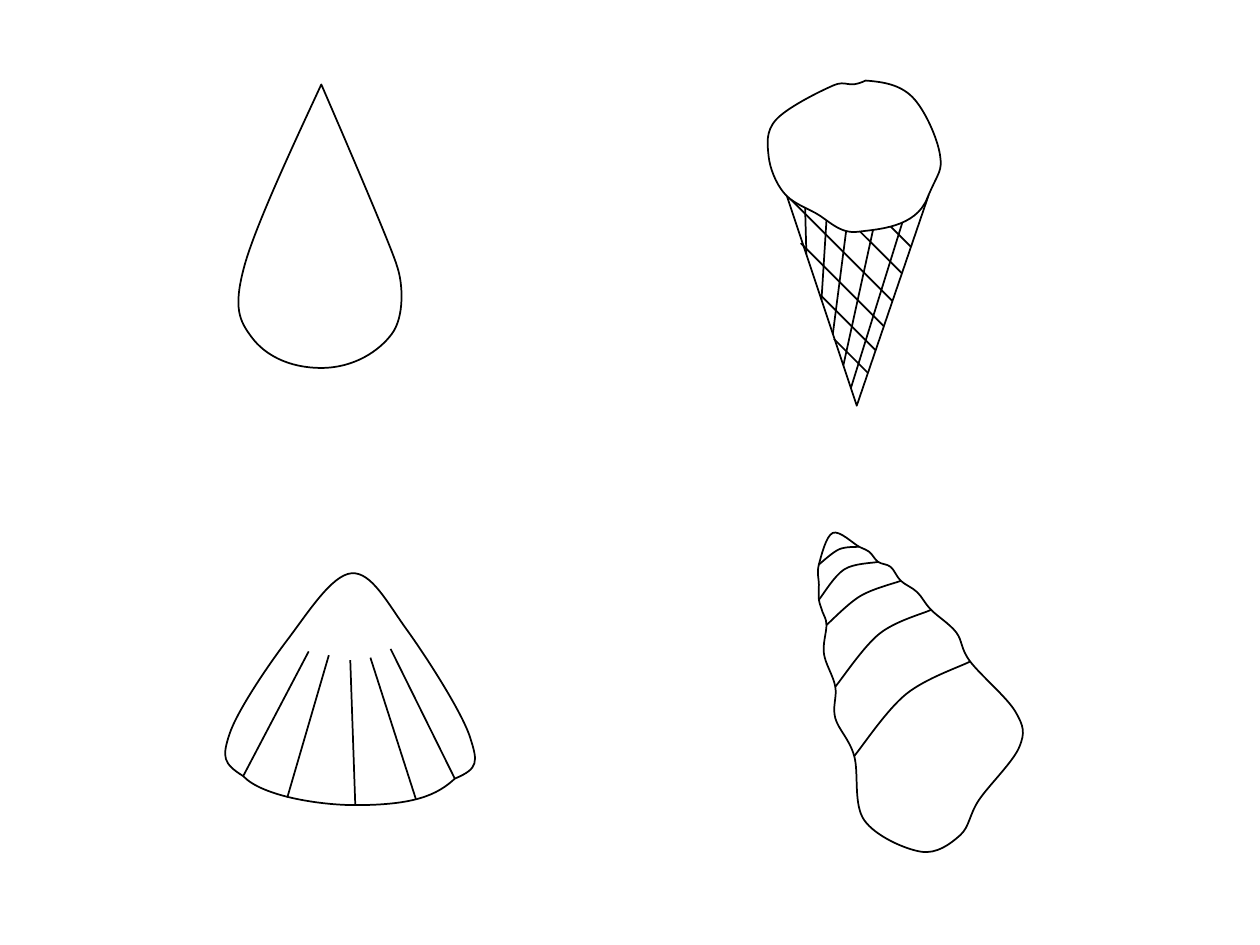
from dataclasses import dataclass

from lxml import etree
from pptx import Presentation
from pptx import util as u
from pptx.dml.color import RGBColor
from pptx.enum import shapes
from pptx.oxml.ns import qn


@dataclass
class Theme:
    ink: RGBColor = RGBColor(0, 0, 0)
    paper: RGBColor = RGBColor(255, 255, 255)
    stroke: float = 1
    columns: int = 10
    rows: float = 7.5


def smooth_handles(before, anchor, after):
    pull_x, pull_y = (after[0] - before[0]) / 6, (after[1] - before[1]) / 6
    arriving = anchor[0] - pull_x, anchor[1] - pull_y
    leaving = anchor[0] + pull_x, anchor[1] + pull_y
    return arriving, leaving


def bezier_points(anchors, closed, creases):
    if closed:
        ring = [anchors[-1], *anchors, anchors[0], anchors[1]]
    else:
        ring = [anchors[0], *anchors, anchors[-1]]
    knots = [(anchor, *creases.get(anchor, smooth_handles(before, anchor, after)))
             for before, anchor, after in zip(ring, ring[1:], ring[2:])]
    points = [anchors[0]]
    for (_, _, leaving), (anchor, arriving, _) in zip(knots, knots[1:]):
        points += [leaving, arriving, anchor]
    return points


class Sketch:
    def __init__(self, deck, theme):
        self.theme = theme
        self.page = deck.slides.add_slide(deck.slide_layouts[6])
        self.column = deck.slide_width / theme.columns
        self.row = deck.slide_height / theme.rows
        self.canvas = self.page.shapes

    def start_group(self):
        self.canvas = self.page.shapes.add_group_shape().shapes

    def place(self, point):
        return round(point[0] * self.column), round(point[1] * self.row)

    def ink(self, shape):
        shape.line.color.rgb = self.theme.ink
        shape.line.width = u.Pt(self.theme.stroke)

    def polygon(self, points, closed=True, filled=False):
        start, *others = [self.place(point) for point in points]
        builder = self.canvas.build_freeform(*start)
        builder.add_line_segments(others, close=closed)
        shape = builder.convert_to_shape()
        shape.shadow.inherit = False
        if filled:
            shape.fill.solid()
            shape.fill.fore_color.rgb = self.theme.paper
        else:
            shape.fill.background()
        self.ink(shape)
        return shape

    def curve(self, anchors, closed=True, filled=False, creases=None):
        points = bezier_points(anchors, closed, creases or {})
        shape = self.polygon(points, closed, filled)
        segments = list(shape.element.iter(qn("a:lnTo")))[:len(points) - 1]
        for first in range(0, len(segments), 3):
            bend, *rest = segments[first:first + 3]
            bend.tag = qn("a:cubicBezTo")
            for segment in rest:
                bend.append(segment[0])
                segment.getparent().remove(segment)

    def line(self, start, end):
        connector = self.canvas.add_connector(
            shapes.MSO_CONNECTOR.STRAIGHT, *self.place(start), *self.place(end))
        self.ink(connector)
        etree.SubElement(connector.element.spPr, qn("a:effectLst"))


def draw_drop(sketch):
    tip, right_side, bottom = (2.55, 0.67), (3.15, 2.11), (2.55, 2.92)
    sketch.curve(
        [tip, right_side, (3.11, 2.65), bottom, (2, 2.68), (1.94, 2.11)],
        creases={tip: ((2.37, 1.06), tip),
                 right_side: ((3.11, 1.96), (3.2, 2.25)),
                 bottom: ((2.81, 2.92), (2.29, 2.92))})


def draw_spiral_shell(sketch):
    tip = (6.61, 4.23)
    left_seams = [(6.5, 4.48), (6.5, 4.76), (6.56, 4.96), (6.63, 5.45), (6.78, 6)]
    crests = [(6.66, 4.36), (6.7, 4.52), (6.83, 4.73), (6.98, 5.03), (7.19, 5.51)]
    right_seams = [(6.82, 4.34), (6.97, 4.46), (7.15, 4.61), (7.39, 4.84), (7.7, 5.25)]
    left_bulges = [(6.5, 4.64), (6.53, 4.86), (6.54, 5.19), (6.63, 5.7)]
    right_bulges = [(6.9, 4.38), (7.07, 4.5), (7.28, 4.7), (7.59, 5.02)]
    mouth = [(8.06, 5.65), (8.09, 5.93), (7.77, 6.35), (7.62, 6.63), (7.31, 6.76), (6.86, 6.51)]

    def down(point):
        return point[1]

    right_side = sorted(right_seams + right_bulges, key=down)
    left_side = sorted(left_seams + left_bulges, key=down, reverse=True)
    sketch.start_group()
    sketch.curve([tip, *right_side, *mouth, *left_side])
    for band in zip(right_seams, crests, left_seams):
        sketch.curve(band, closed=False)


def draw_fan_shell(sketch):
    top, left_corner, right_corner, base = (2.79, 4.55), (1.93, 6.16), (3.61, 6.18), (2.82, 6.39)
    rib_tops = [(2.45, 5.17), (2.61, 5.2), (2.78, 5.24), (2.94, 5.22), (3.1, 5.15)]
    rib_feet = [left_corner, (2.28, 6.33), base, (3.3, 6.34), right_corner]
    sketch.start_group()
    sketch.curve(
        [top, (3.23, 5), (3.73, 5.85), right_corner, base, left_corner, (1.82, 5.83), (2.28, 5.08)],
        creases={right_corner: ((3.8, 6.1), (3.47, 6.31)),
                 base: ((3.29, 6.39), (2.54, 6.39)),
                 left_corner: ((2.08, 6.32), (1.77, 6.06))})
    for rib_top, rib_foot in zip(rib_tops, rib_feet):
        sketch.line(rib_top, rib_foot)


def draw_ice_cream(sketch):
    left_rim, right_rim, cone_tip = (6.23, 1.51), (7.37, 1.55), (6.8, 3.22)

    def on_edge(rim, y):
        share = (y - rim[1]) / (cone_tip[1] - rim[1])
        return rim[0] + share * (cone_tip[0] - rim[0]), y

    sketch.start_group()
    sketch.polygon([left_rim, right_rim, cone_tip])

    diagonal_ends = [1.96, 2.17, 2.39, 2.59, 2.78, 2.96]
    diagonal_runs = [0.17, 0.36, 0.84, 0.66, 0.44, 0.27]
    for y, run in zip(diagonal_ends, diagonal_runs):
        x, y = on_edge(right_rim, y)
        sketch.line((x - run, y - run), (x, y))

    steep_starts = [(6.39, 1.65), (6.56, 1.74), (6.72, 1.8), (6.93, 1.82), (7.17, 1.74)]
    steep_ends = [2.02, 2.38, 2.65, 2.9, 3.08]
    for start, y in zip(steep_starts, steep_ends):
        sketch.line(start, on_edge(left_rim, y))

    dimple, drip = (6.87, 0.64), (7.36, 1.57)
    sketch.curve(
        [dimple, (6.61, 0.68), (6.16, 0.95), (6.1, 1.24), (6.22, 1.53), (6.47, 1.69),
         (6.81, 1.84), drip, (7.46, 1.23), (7.24, 0.77)],
        filled=True,
        creases={dimple: ((7.01, 0.65), (6.72, 0.71)),
                 drip: ((7.27, 1.81), (7.45, 1.36))})


def main():
    deck = Presentation()
    deck.slide_width, deck.slide_height = u.Inches(10), u.Inches(7.5)
    sketch = Sketch(deck, Theme())
    for draw in (draw_drop, draw_spiral_shell, draw_fan_shell, draw_ice_cream):
        draw(sketch)
    deck.save("out.pptx")


if __name__ == "__main__":
    main()
